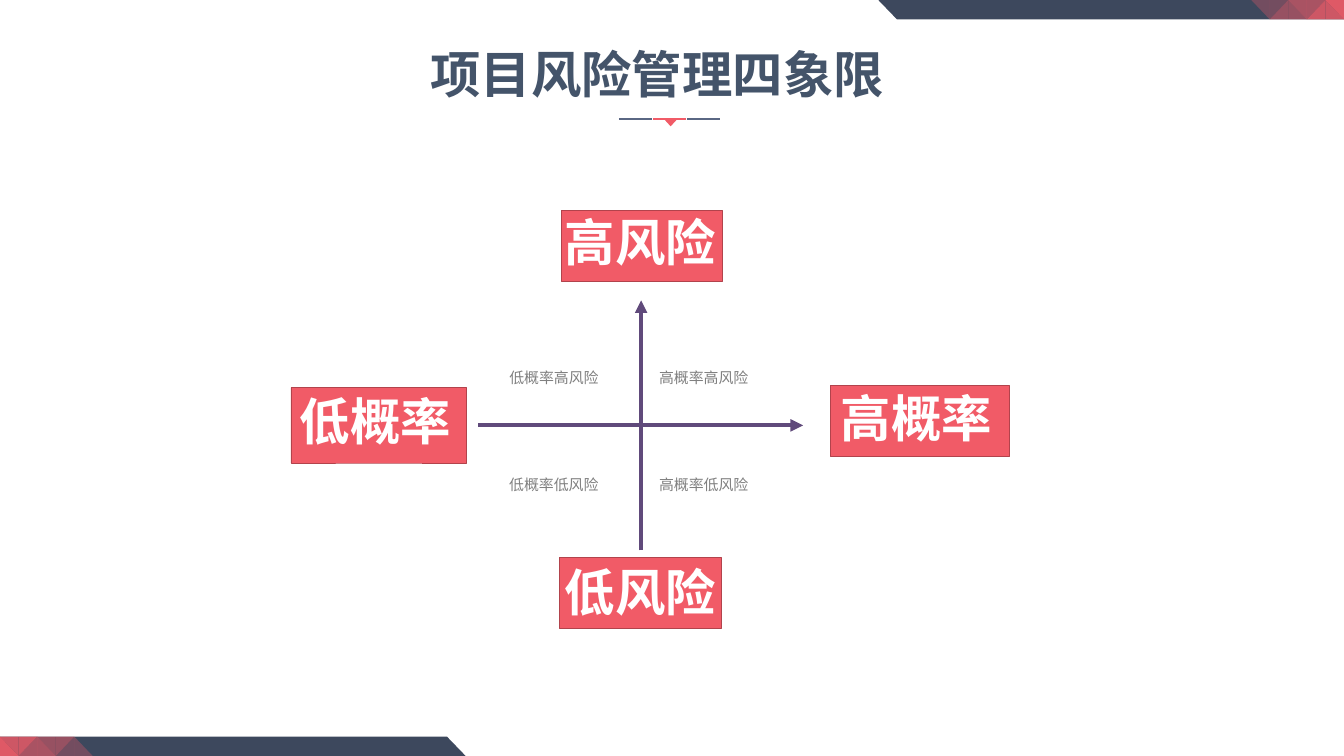
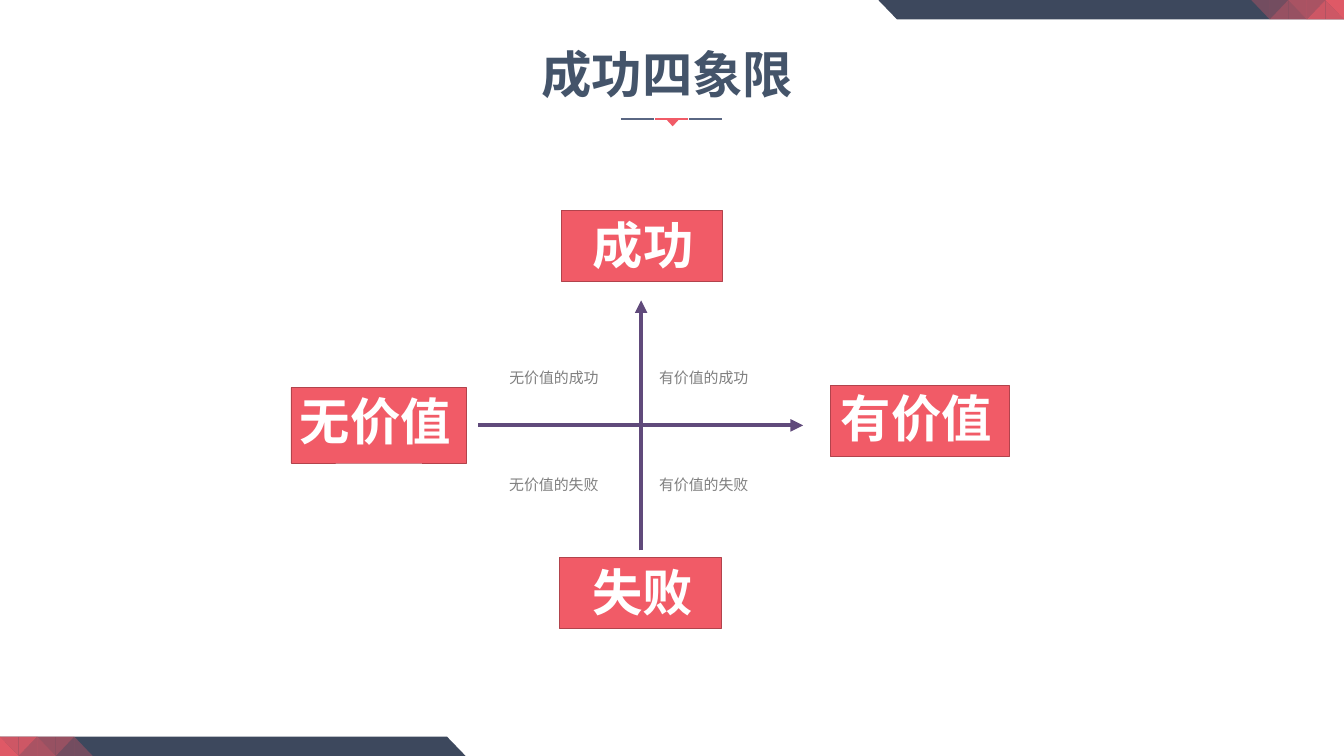
from lxml.etree import SubElement
from pptx import Presentation
from pptx.dml.color import RGBColor
from pptx.enum.shapes import MSO_CONNECTOR as Connector, MSO_SHAPE as Shape
from pptx.enum.text import MSO_AUTO_SIZE as AutoSize, PP_ALIGN as Align
from pptx.oxml.ns import qn
from pptx.util import Inches, Pt

COLORS = {
    "band": "3D485D",
    "accent": "F15B67",
    "accent_edge": "B2434C",
    "title": "44546A",
    "rule": "5A6783",
    "axis": "604A7B",
    "label": "808080",
    "white": "FFFFFF",
}
FONT = "Arial"
SLIDE_WIDTH, SLIDE_HEIGHT = 20, 11.25

# Corner band, and the facets at its end as (column, row) corners on a grid
BAND = [(13.07, 0), (20, 0), (20, 0.29), (13.35, 0.29)]
FACET_LEFT, FACET_WIDTH, FACET_HEIGHT = 18.62, 0.276, 0.29
FACETS = [
    (30, [(0, 0), (1, 1), (1, 0)]),
    (30, [(2, 0), (1, 0), (1, 1)]),
    (50, [(1, 1), (2, 1), (2, 0)]),
    (50, [(2, 0), (2, 1), (3, 1)]),
    (80, [(4, 0), (4, 1), (5, 1)]),
    (80, [(4, 0), (3, 1), (4, 1)]),
    (60, [(2, 0), (3, 1), (3, 0)]),
    (60, [(4, 0), (3, 0), (3, 1)]),
    (90, [(4, 0), (5, 1), (5, 0)]),
]

# Quadrant label boxes: left, top, width
QUADRANTS = [(7.48, 5.31, 1.75), (9.71, 5.31, 2.54),
             (7.48, 6.9, 1.56), (9.71, 6.9, 2.54)]
# Boxes at the axis ends: left, top, width, height
AXIS_ENDS = {
    "right": (12.36, 5.74, 2.66, 1.06),
    "top": (8.35, 3.13, 2.4, 1.06),
    "bottom": (8.33, 8.3, 2.4, 1.06),
    "left": (4.33, 5.77, 2.61, 1.12),
}

# Each axis end holds its text with the left, top and width of the text box
SLIDES = [
    {
        "title": "项目风险管理四象限", "title_left": 5.28, "mark_left": 9.21,
        "quadrants": ["低概率高风险", "高概率高风险", "低概率低风险", "高概率低风险"],
        "ends": {
            "right": ("高概率", 12.05, 5.71, 3.17),
            "top": ("高风险", 8.18, 3.09, 2.7),
            "bottom": ("低风险", 8.25, 8.3, 2.56),
            "left": ("低概率", 3.7, 5.76, 3.77),
        },
    },
    {
        "title": "成功四象限", "title_left": 5.43, "mark_left": 9.24,
        "quadrants": ["无价值的成功", "有价值的成功", "无价值的失败", "有价值的失败"],
        "ends": {
            "right": ("有价值", 12.05, 5.71, 3.17),
            "top": ("成功", 8.58, 3.13, 1.98),
            "bottom": ("失败", 8.57, 8.3, 1.98),
            "left": ("无价值", 3.7, 5.76, 3.77),
        },
    },
]


def rgb(name):
    return RGBColor.from_string(COLORS[name])


def style_shape(shape, fill, edge=None):
    shape.shadow.inherit = False
    shape.fill.solid()
    shape.fill.fore_color.rgb = rgb(fill)
    if edge:
        shape.line.color.rgb = rgb(edge)
        shape.line.width = Pt(1)
    else:
        shape.line.fill.background()


def add_polygon(shapes, points, fill, opacity=100):
    corners = [(Inches(x), Inches(y)) for x, y in points]
    builder = shapes.build_freeform(*corners[0])
    builder.add_line_segments(corners[1:], close=True)
    shape = builder.convert_to_shape()
    style_shape(shape, fill)
    if opacity < 100:
        color = shape.element.spPr.find(f"{qn('a:solidFill')}/{qn('a:srgbClr')}")
        SubElement(color, qn("a:alpha"), val=str(opacity * 1000))


def add_preset(shapes, preset, box, fill, edge=None):
    shape = shapes.add_shape(preset, *map(Inches, box))
    style_shape(shape, fill, edge)


def add_line(shapes, start, end, color, width, arrow=False):
    line = shapes.add_connector(Connector.STRAIGHT, *map(Inches, start + end))
    line.line.color.rgb = rgb(color)
    line.line.width = Pt(width)
    if arrow:
        SubElement(line.line._get_or_add_ln(), qn("a:tailEnd"), type="triangle")
    SubElement(line._element.spPr, qn("a:effectLst"))


def add_text(shapes, text, box, size, color):
    frame = shapes.add_textbox(*map(Inches, box)).text_frame
    frame.word_wrap = True
    frame.auto_size = AutoSize.SHAPE_TO_FIT_TEXT
    paragraph = frame.paragraphs[0]
    paragraph.text = text
    paragraph.font.name = FONT
    paragraph.font.size = Pt(size)
    paragraph.font.color.rgb = rgb(color)
    return paragraph


def add_heading(shapes, text, left, top, width, color):
    paragraph = add_text(shapes, text, (left, top, width, 1.01), 54, color)
    paragraph.alignment = Align.CENTER
    paragraph.font.bold = True


def add_quadrant_label(shapes, text, left, top, width):
    paragraph = add_text(shapes, text, (left, top, width, 0.5), 16, "label")
    paragraph.line_spacing = 1.5
    paragraph.space_before = Pt(3.2)


def add_corner(slide, turned):
    """Draw the top right corner, or the same turned to the bottom left."""
    def place(points):
        if turned:
            return [(SLIDE_WIDTH - x, SLIDE_HEIGHT - y) for x, y in points]
        return points

    shapes = slide.shapes.add_group_shape().shapes
    add_polygon(shapes, place(BAND), "band")
    for opacity, cells in FACETS:
        points = [(FACET_LEFT + column * FACET_WIDTH, row * FACET_HEIGHT)
                  for column, row in cells]
        add_polygon(shapes, place(points), "accent", opacity)


def add_title_mark(slide, left):
    shapes = slide.shapes.add_group_shape().shapes
    for offset, color in [(0, "rule"), (1.01, "rule"), (0.51, "accent")]:
        start = left + offset
        add_line(shapes, (start, 1.77), (start + 0.49, 1.77), color, 2.25)
    add_preset(shapes, Shape.FLOWCHART_MERGE, (left + 0.66, 1.76, 0.22, 0.12), "accent")


def add_axes(shapes):
    add_line(shapes, (7.12, 6.33), (11.95, 6.33), "axis", 4.5, arrow=True)
    add_line(shapes, (9.54, 8.19), (9.54, 4.47), "axis", 4.5, arrow=True)


def add_quadrant_slide(presentation, content):
    slide = presentation.slides.add_slide(presentation.slide_layouts[6])
    shapes = slide.shapes

    # Corners and title
    for turned in (False, True):
        add_corner(slide, turned)
    add_heading(shapes, content["title"], content["title_left"], 0.59, 9, "title")
    add_title_mark(slide, content["mark_left"])

    # Axes and quadrants
    add_axes(shapes)
    for text, box in zip(content["quadrants"], QUADRANTS):
        add_quadrant_label(shapes, text, *box)

    # Axis ends
    for end, box in AXIS_ENDS.items():
        add_preset(shapes, Shape.RECTANGLE, box, "accent", "accent_edge")
        add_heading(shapes, *content["ends"][end], "white")


def main():
    presentation = Presentation()
    presentation.slide_width = Inches(SLIDE_WIDTH)
    presentation.slide_height = Inches(SLIDE_HEIGHT)
    for content in SLIDES:
        add_quadrant_slide(presentation, content)
    presentation.save("out.pptx")


if __name__ == "__main__":
    main()
